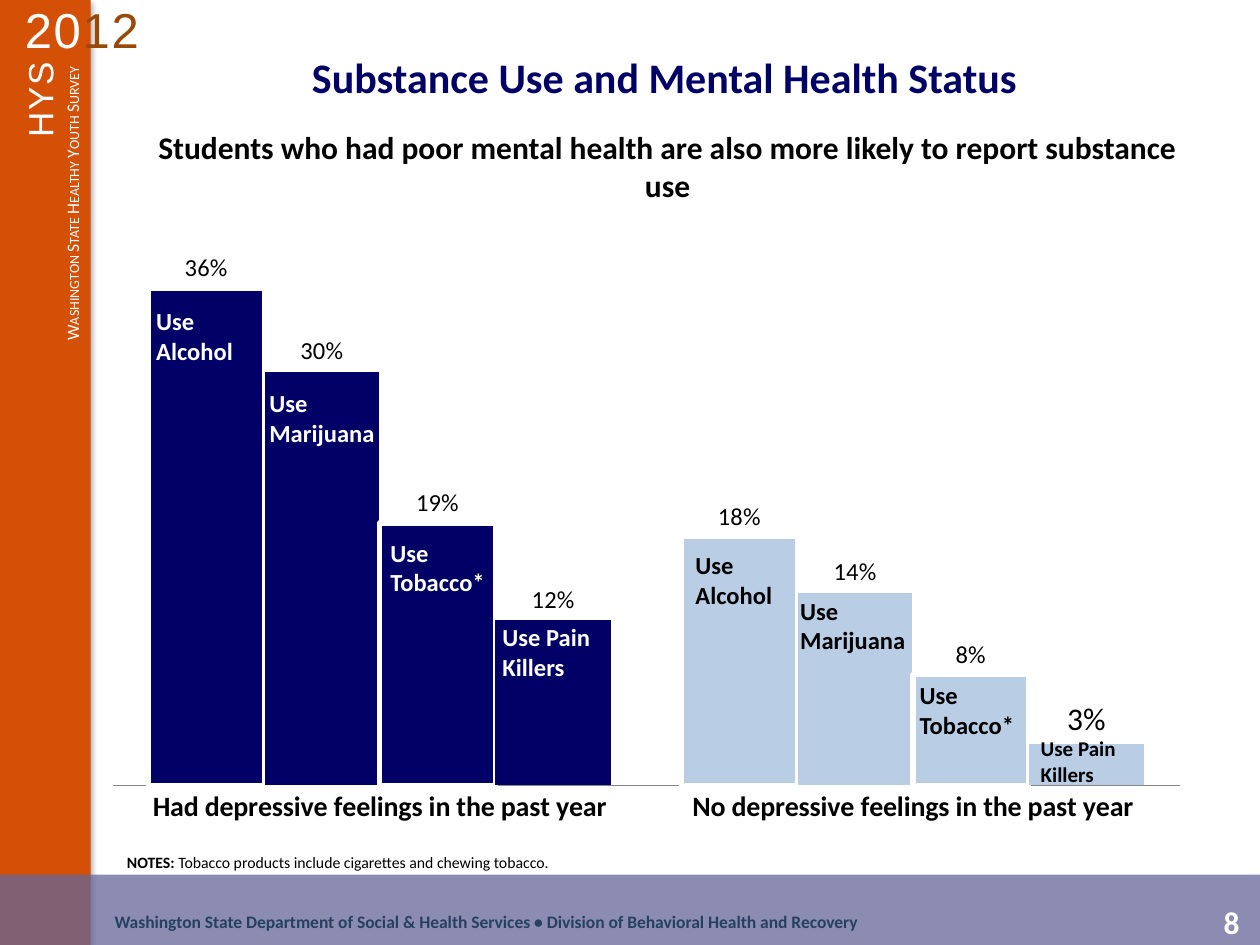
from dataclasses import dataclass

from lxml import etree
from pptx import Presentation
from pptx import util as u
from pptx.chart import data as chart_data
from pptx.dml.color import RGBColor
from pptx.enum import chart as ch, shapes, text
from pptx.oxml import parse_xml
from pptx.oxml.ns import nsdecls, qn

COLOURS = {
    "orange": "D55007", "brown": "984807", "violet": "666699", "slate": "254061",
    "navy": "000066", "pale": "B9CDE5", "grey": "868686",
    "white": "FFFFFF", "black": "000000",
}
LEFT, CENTRE, RIGHT = text.PP_ALIGN.LEFT, text.PP_ALIGN.CENTER, text.PP_ALIGN.RIGHT


@dataclass
class Frame:
    left: float
    top: float
    width: float
    height: float

    def lengths(self) -> list[u.Cm]:
        return [u.Cm(n) for n in (self.left, self.top, self.width, self.height)]


@dataclass
class Span:
    words: str
    colour: str | None = None
    bold: bool | None = None


@dataclass
class Label:
    frame: Frame
    spans: list[Span]
    size: float
    colour: str = "black"
    bold: bool = True
    align: text.PP_ALIGN = LEFT
    font: str = "Calibri"
    rotation: int = 0
    spacing: int = 0
    small_caps: bool = False


@dataclass
class Series:
    name: str
    values: tuple[float, float]
    outline: float
    label_size: int = 14


def rgb(name: str) -> RGBColor:
    return RGBColor.from_string(COLOURS[name])


def add_label(slide, label: Label) -> None:
    box = slide.shapes.add_textbox(*label.frame.lengths())
    box.rotation = label.rotation
    box.text_frame.word_wrap = True
    para = box.text_frame.paragraphs[0]
    para.alignment = label.align
    para.font.name, para.font.size = label.font, u.Pt(label.size)
    para.font.bold = label.bold
    para.font.color.rgb = rgb(label.colour)
    for part in label.spans:
        span = para.add_run()
        span.text = part.words
        if part.bold is not None:
            span.font.bold = part.bold
        if part.colour:
            span.font.color.rgb = rgb(part.colour)
        properties = span.font._element
        if label.spacing:
            properties.set("spc", str(label.spacing))
        if label.small_caps:
            properties.set("cap", "small")


def add_band(slide, frame: Frame, colour: str):
    band = slide.shapes.add_shape(shapes.MSO_SHAPE.RECTANGLE, *frame.lengths())
    band.shadow.inherit = False
    band.fill.solid()
    band.fill.fore_color.rgb = rgb(colour)
    band.line.fill.background()
    return band


def add_bands(slide) -> None:
    side = add_band(slide, Frame(0, 0, 1.83, 19.05), "orange")
    effects = side._element.spPr.find(qn("a:effectLst"))
    effects.append(parse_xml(
        f'<a:outerShdw {nsdecls("a")} blurRad="39370" dist="22860" dir="5400000" rotWithShape="0">'
        '<a:srgbClr val="000000"><a:alpha val="35000"/></a:srgbClr></a:outerShdw>'))
    footer = add_band(slide, Frame(0, 17.63, 25.4, 1.42), "violet")
    colour = footer._element.spPr.find(qn("a:solidFill"))[0]
    etree.SubElement(colour, qn("a:alpha")).set("val", "75000")


def style_series(series, spec_row: Series) -> None:
    series.format.fill.solid()
    series.format.fill.fore_color.rgb = rgb("navy")
    series.invert_if_negative = False
    for index, colour in enumerate(("navy", "pale")):
        look = series.points[index].format
        look.fill.solid()
        look.fill.fore_color.rgb = rgb(colour)
        if spec_row.outline:
            look.line.color.rgb = rgb("white")
            look.line.width = u.Pt(spec_row.outline)
        else:
            look.line.fill.background()
    labels = series.data_labels
    labels.show_value = True
    labels.number_format, labels.number_format_is_linked = "0%", False
    labels.position = ch.XL_LABEL_POSITION.OUTSIDE_END
    labels.font.size = u.Pt(spec_row.label_size)


def add_survey_chart(slide, rows: list[Series]) -> None:
    data = chart_data.CategoryChartData(number_format="0%")
    data.categories = ["Had depressive feelings in the past year",
                       "No depressive feelings in the past year"]
    for row in rows:
        data.add_series(row.name, row.values)
    chart = slide.shapes.add_chart(ch.XL_CHART_TYPE.COLUMN_CLUSTERED,
                                   *Frame(1.4, 2.84, 23.24, 14).lengths(), data).chart
    chart.has_legend = chart.has_title = False
    chart.font.name, chart.font.size = "Calibri", u.Pt(18)
    chart.font.color.rgb = rgb("black")

    plot = chart.plots[0]
    plot.gap_width, plot.overlap, plot.vary_by_categories = 61, 0, False
    for series, row in zip(plot.series, rows):
        style_series(series, row)
    first_label = plot.series[3].points[0].data_label
    first_label.font.size = u.Pt(14)
    first_label.position = ch.XL_LABEL_POSITION.OUTSIDE_END

    values = chart.value_axis
    values.minimum_scale, values.maximum_scale = 0, 0.4
    values.has_major_gridlines = values.visible = False
    groups = chart.category_axis
    groups.major_tick_mark = ch.XL_TICK_MARK.NONE
    groups.tick_labels.font.size, groups.tick_labels.font.bold = u.Pt(16), True
    groups.format.line.color.rgb = rgb("grey")

    area = chart._chartSpace.chart.plotArea
    for old in area.findall(qn("c:layout")):
        area.remove(old)
    layout = etree.Element(qn("c:layout"))
    manual = etree.SubElement(layout, qn("c:manualLayout"))
    for tag, value in (("layoutTarget", "inner"), ("xMode", "edge"), ("yMode", "edge"),
                       ("x", "0.038"), ("y", "0.133"), ("w", "0.925"), ("h", "0.795")):
        etree.SubElement(manual, qn(f"c:{tag}")).set("val", value)
    area.insert(0, layout)


SERIES = [
    Series("Series 1", (0.36, 0.18), 3),
    Series("Series 2", (0.30, 0.14), 0.75),
    Series("Series 3", (0.19, 0.08), 3),
    Series("Series 4", (0.12, 0.03), 0, 18),
]
MASTER_LABELS = [
    Label(Frame(23.98, 18.08, 1.7, 1.02), [Span("8")], 18, "white", align=CENTRE),
    Label(Frame(2.06, 18.25, 23.22, 0.67),
          [Span("Washington State Department of Social & Health Services • "
                "Division of Behavioral Health and Recovery")], 10, "slate"),
    Label(Frame(0.25, -0.13, 3.51, 1.45), [Span("20"), Span("12", "brown")], 28, "white",
          False, font="Arial", spacing=100),
    Label(Frame(-2.41, 4.62, 7.75, 0.69), [Span("Washington State Healthy Youth Survey")], 10,
          "white", False, RIGHT, rotation=270, small_caps=True),
    Label(Frame(-2.46, 3.71, 6.53, 1.12), [Span("HYS")], 20, "white", False, RIGHT, "Arial",
          rotation=270, spacing=100),
]
HEADINGS = [
    Label(Frame(2.36, 0.91, 22.07, 1.27), [Span("Substance Use and Mental Health Status")],
          24, "navy", align=CENTRE),
    Label(Frame(2.46, 2.46, 22, 2.39),
          [Span("Students who had poor mental health are also more likely to report "
                "substance use")], 18, align=CENTRE),
    Label(Frame(2.31, 17.07, 22, 0.64),
          [Span("NOTES: ", bold=True),
           Span("Tobacco products include cigarettes and chewing tobacco.")], 9, bold=False),
]
SUBSTANCES = ["Alcohol", "Marijuana", "Tobacco*", "Pain Killers"]
BAR_LABEL_CORNERS = {
    "white": [(2.9, 6.05), (5.18, 7.7), (7.62, 10.72), (9.88, 12.42)],
    "black": [(13.77, 10.97), (15.88, 11.89), (18.29, 13.59), (20.73, 14.71)],
}


def main() -> None:
    deck = Presentation()
    deck.slide_width, deck.slide_height = u.Cm(25.4), u.Cm(19.05)
    slide = deck.slides.add_slide(deck.slide_layouts[6])
    add_bands(slide)
    for label in MASTER_LABELS:
        add_label(slide, label)
    add_survey_chart(slide, SERIES)
    for label in HEADINGS:
        add_label(slide, label)
    for colour, corners in BAR_LABEL_CORNERS.items():
        for substance, (left, top) in zip(SUBSTANCES, corners):
            lowest_bar = colour == "black" and substance == "Pain Killers"
            add_label(slide, Label(Frame(left, top, 2.72, 1.27 if lowest_bar else 1.45),
                                   [Span(f"Use {substance}")], 12 if lowest_bar else 14, colour))
    deck.save("out.pptx")


if __name__ == "__main__":
    main()
